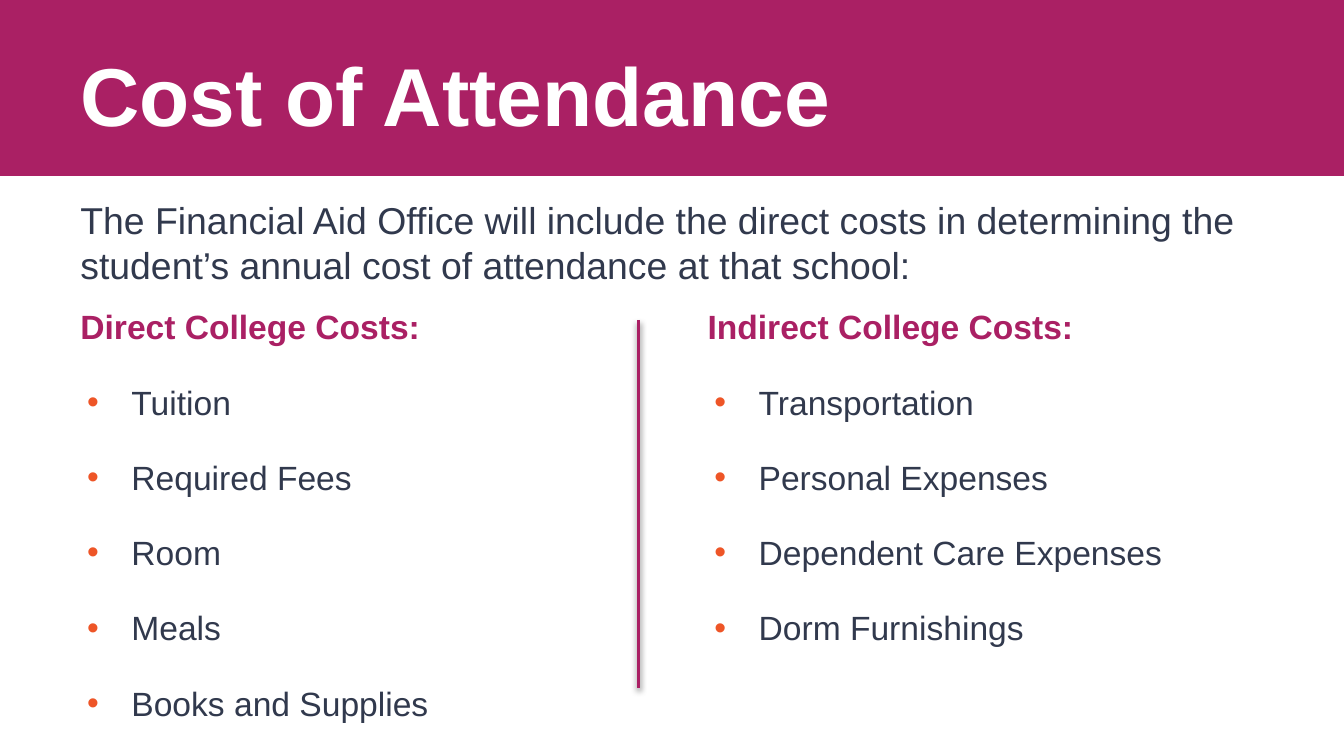
from lxml import etree
from pptx import Presentation
from pptx.dml.color import RGBColor
from pptx.enum.shapes import MSO_CONNECTOR, MSO_SHAPE
from pptx.enum.text import MSO_ANCHOR
from pptx.oxml.ns import qn
from pptx.util import Inches, Pt

RECT = MSO_SHAPE.RECTANGLE
STRAIGHT = MSO_CONNECTOR.STRAIGHT
TOP, MIDDLE = MSO_ANCHOR.TOP, MSO_ANCHOR.MIDDLE

COLORS = {"berry": "AA2064", "ink": "31394D", "bullet": "EE5527", "white": "FFFFFF", "shadow": "000000"}
FORMATS = {
    "title": {"size": Pt(44), "bold": True, "color": "white"},
    "intro": {"size": Pt(20), "bold": False, "color": "ink"},
    "heading": {"size": Pt(18), "bold": True, "color": "berry"},
    "item": {"size": Pt(18), "bold": False, "color": "ink"},
}
COSTS = {
    "Direct College Costs:": ["Tuition", "Required Fees", "Room", "Meals", "Books and Supplies"],
    "Indirect College Costs:": ["Transportation", "Personal Expenses", "Dependent Care Expenses", "Dorm Furnishings"],
}
COLUMN_LEFTS = (5, 51.67)


class Deck:
    """Slide builder on a 16:9 grid of 100 columns by 56.25 rows, with one shared style."""

    def __init__(self, cols=100, rows=56.25, cell=0.1, font="Arial"):
        self.cell, self.font = cell, font
        self.prs = Presentation()
        self.prs.slide_width, self.prs.slide_height = self.grid(cols, rows)
        self.s = self.prs.slides.add_slide(self.prs.slide_layouts[6])

    def grid(self, *units):
        return [Inches(u * self.cell) for u in units]

    def color(self, name):
        return RGBColor.from_string(COLORS[name])

    def band(self, box, fill):
        sp = self.s.shapes.add_shape(RECT, *self.grid(*box))
        sp.shadow.inherit = False
        sp.fill.solid()
        sp.fill.fore_color.rgb = self.color(fill)
        sp.line.fill.background()

    def text(self, box, lines, anchor=TOP):
        tf = self.s.shapes.add_textbox(*self.grid(*box)).text_frame
        tf.word_wrap, tf.vertical_anchor = True, anchor
        for i, (words, style) in enumerate(lines):
            p = tf.add_paragraph() if i else tf.paragraphs[0]
            if style == "item":
                self.bullet(p)
            r = p.add_run()
            r.text, r.font.name = words, self.font
            for key, value in FORMATS[style].items():
                if key == "color":
                    r.font.color.rgb = self.color(value)
                else:
                    setattr(r.font, key, value)

    def bullet(self, p):
        pPr = p._p.get_or_add_pPr()
        pPr.set("marL", str(Inches(0.38)))
        pPr.set("indent", str(Inches(-0.33)))
        clr = etree.SubElement(pPr, qn("a:buClr"))
        etree.SubElement(clr, qn("a:srgbClr"), val=COLORS["bullet"])
        etree.SubElement(pPr, qn("a:buFont"), typeface=self.font)
        etree.SubElement(pPr, qn("a:buChar"), char="•")
        p.space_before = Pt(18.7)

    def divider(self, ends, color, width):
        sp = self.s.shapes.add_connector(STRAIGHT, *self.grid(*ends))
        sp.line.color.rgb = self.color(color)
        sp.line.width = Pt(width)
        effects = etree.SubElement(sp._element.spPr, qn("a:effectLst"))
        shadow = etree.SubElement(effects, qn("a:outerShdw"), blurRad=str(Pt(3.1)),
                                  dist=str(Pt(1.6)), dir="5400000", rotWithShape="0")
        clr = etree.SubElement(shadow, qn("a:srgbClr"), val=COLORS["shadow"])
        etree.SubElement(clr, qn("a:alpha"), val="38000")


def main():
    deck = Deck()
    deck.band((0, 0, 100, 13.1), "berry")
    deck.text((5, 2.3, 90, 9.4), [("Cost of Attendance", "title")], MIDDLE)
    for left, (heading, items) in zip(COLUMN_LEFTS, COSTS.items()):
        lines = [(heading, "heading")] + [(item, "item") for item in items]
        deck.text((left, 22.3, 45, 37.1), lines)
    deck.text((5, 14.2, 90, 5.8), [(
        "The Financial Aid Office will include the direct costs in determining "
        "the student’s annual cost of attendance at that school:", "intro")])
    deck.divider((47.5, 23.8, 47.5, 51.2), "berry", 2)
    deck.prs.save("out.pptx")


if __name__ == "__main__":
    main()
